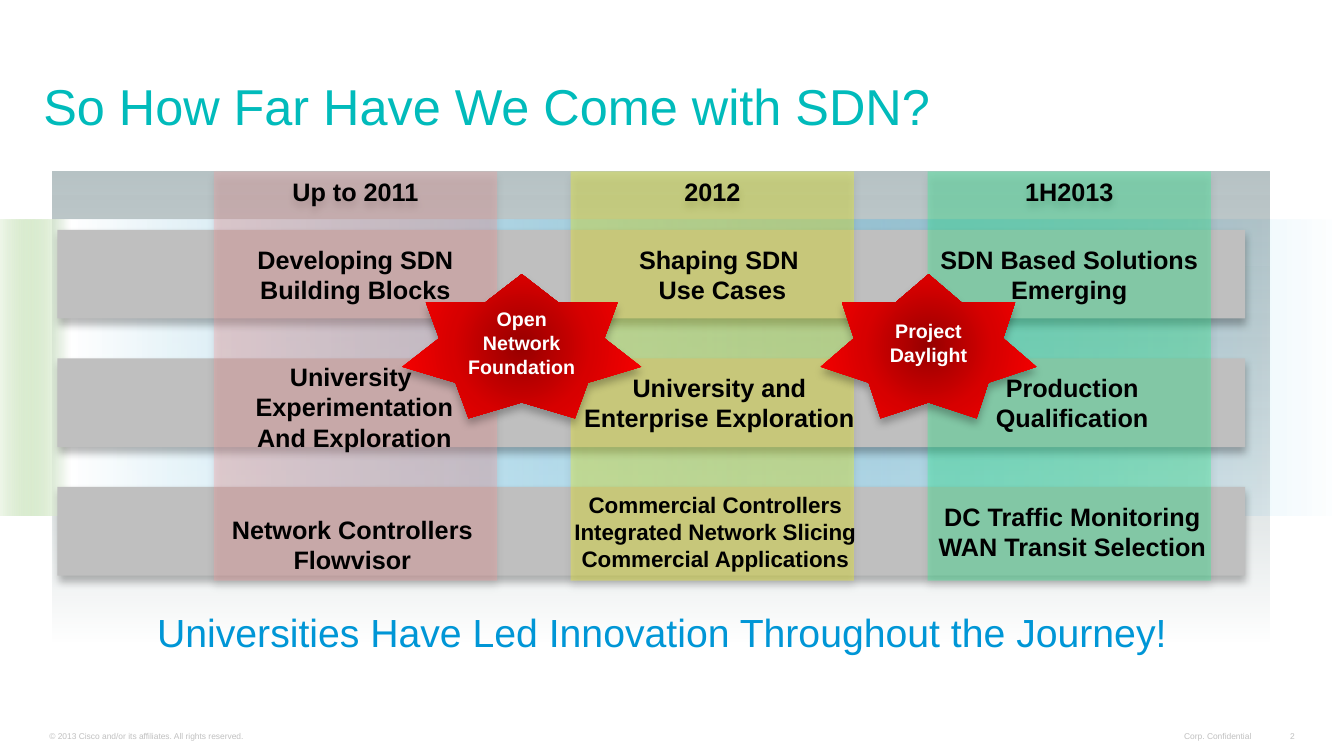
from lxml import etree
from pptx import Presentation
from pptx.dml.color import RGBColor
from pptx.enum.shapes import MSO_SHAPE
from pptx.enum.text import MSO_ANCHOR, MSO_AUTO_SIZE, PP_ALIGN
from pptx.oxml.ns import qn
from pptx.util import Inches, Pt

RECT, STAR = MSO_SHAPE.RECTANGLE, MSO_SHAPE.STAR_7_POINT
TOP, MIDDLE, BOTTOM = MSO_ANCHOR.TOP, MSO_ANCHOR.MIDDLE, MSO_ANCHOR.BOTTOM
LEFT, CENTER, RIGHT = PP_ALIGN.LEFT, PP_ALIGN.CENTER, PP_ALIGN.RIGHT

FONT = "Arial"
C = {"title": "01BBBB", "blue": "0096D6", "footer": "C0C0C0", "bar": "BFBFBF",
     "slate": "8EA1A3", "mist": "B7C3C5", "green": "6DB344", "white": "FFFFFF",
     "black": "000000", "pink": "FF9999", "yellow": "FFFF00", "mint": "1AFF8E",
     "red_in": "970000", "red_mid": "D70000", "red_out": "FF0000"}

# Grid: three period columns over three topic bars
COL_X, COL_STEP, COL_W = 2.12, 3.54, 2.81
COL_Y, COL_H = 1.7, 4.06
BAR_X, BAR_W = 0.57, 11.78
ROW_Y, ROW_STEP, ROW_H = 2.28, 1.275, 0.88
# Cell text is centred on its column, in a box wide enough for the longest line
CELL_W = 3.2
CELL_X = COL_X + (COL_W - CELL_W) / 2

PERIODS = [("Up to 2011", "pink"), ("2012", "yellow"), ("1H2013", "mint")]
# Rows of cells: text, size, nudge right, nudge down
CELLS = [
    [("Developing SDN\nBuilding Blocks", 18, 0, 0),
     ("Shaping SDN \nUse Cases", 18, 0.1, 0),
     ("SDN Based Solutions\nEmerging", 18, 0, 0)],
    [("University \nExperimentation\nAnd Exploration", 18, -0.01, 0.04),
     ("University and\nEnterprise Exploration", 18, 0.07, 0),
     ("Production\nQualification", 18, 0.03, 0)],
    [("Network Controllers\nFlowvisor", 18, -0.03, 0.13),
     ("Commercial Controllers\nIntegrated Network Slicing\nCommercial Applications",
      16, 0.03, 0),
     ("DC Traffic Monitoring\nWAN Transit Selection", 18, 0.03, 0)],
]
MILESTONES = [(8.14, 2.14, "Project\nDaylight"),
              (3.99, 2.37, "Open\nNetwork\nFoundation")]
FOOTERS = [(0.39, 4.99, LEFT, "© 2013 Cisco and/or its affiliates. All rights reserved."),
           (11.64, 0.87, RIGHT, "Corp. Confidential"),
           (12.66, 0.28, RIGHT, "2")]


def style_text(tf, text, size, color, bold=False, align=CENTER, anchor=TOP):
    tf.text = text
    tf.vertical_anchor = anchor
    for p in tf.paragraphs:
        p.alignment = align
        for r in p.runs:
            r.font.name, r.font.size, r.font.bold = FONT, Pt(size), bold
            r.font.color.rgb = RGBColor.from_string(C[color])


def add_label(slide, x, y, w, h, text, size, color, **look):
    s = slide.shapes.add_textbox(Inches(x), Inches(y), Inches(w), Inches(h))
    s.text_frame.word_wrap = False
    style_text(s.text_frame, text, size, color, **look)
    return s


def add_color(parent, color, alpha=100):
    node = etree.SubElement(parent, qn("a:srgbClr"), val=C[color])
    if alpha < 100:
        etree.SubElement(node, qn("a:alpha"), val=str(alpha * 1000))


def fill_gradient(s, stops, angle=None):
    """Stops are (position, color, alpha); no angle means from the centre out."""
    grad = etree.Element(qn("a:gradFill"), rotWithShape="1")
    gs_list = etree.SubElement(grad, qn("a:gsLst"))
    for pos, color, alpha in stops:
        gs = etree.SubElement(gs_list, qn("a:gs"), pos=str(pos * 1000))
        add_color(gs, color, alpha)
    if angle is None:
        circle = etree.SubElement(grad, qn("a:path"), path="circle")
        etree.SubElement(circle, qn("a:fillToRect"),
                         {side: "50000" for side in "ltrb"})
    else:
        etree.SubElement(grad, qn("a:lin"), ang=str(angle * 60000), scaled="0")
    s._element.spPr.find(qn("a:prstGeom")).addnext(grad)


def fill_solid(s, color, alpha=100):
    s.fill.solid()
    s.fill.fore_color.rgb = RGBColor.from_string(C[color])
    if alpha < 100:
        node = s._element.spPr.find(qn("a:solidFill"))[0]
        etree.SubElement(node, qn("a:alpha"), val=str(alpha * 1000))


def add_block(slide, kind, x, y, w, h, shadow=True):
    s = slide.shapes.add_shape(kind, Inches(x), Inches(y), Inches(w), Inches(h))
    s.line.fill.background()
    s.shadow.inherit = False
    if shadow:
        effects = s._element.spPr.find(qn("a:effectLst"))
        outer = etree.SubElement(effects, qn("a:outerShdw"), blurRad=str(Pt(6)),
                                 dist=str(Pt(4)), dir="5400000", rotWithShape="0")
        add_color(outer, "black", 27)
    return s


def add_title(slide, text):
    s = slide.shapes.title
    s.left, s.top, s.width, s.height = (Inches(v) for v in (0.33, 0.47, 12.51, 0.92))
    style_text(s.text_frame, text, 36, "title", align=LEFT, anchor=BOTTOM)
    s.text_frame.auto_size = MSO_AUTO_SIZE.NONE
    s.text_frame.paragraphs[0].line_spacing = 0.8


def add_backdrop(slide):
    panel = add_block(slide, RECT, 0.52, COL_Y, 12.07, 4.68, shadow=False)
    fill_gradient(panel, [(0, "slate", 0), (100, "mist", 100)], 270)
    band = add_block(slide, RECT, -0.1, 2.18, 13.33, 2.94, shadow=False)
    fill_gradient(band, [(0, "blue", 0), (94, "white", 100), (100, "green", 0)], 0)
    band.rotation = 180
    band._element.spPr.find(qn("a:xfrm")).set("flipV", "1")


def add_grid(slide):
    for row in reversed(range(len(CELLS))):
        bar = add_block(slide, RECT, BAR_X, ROW_Y + row * ROW_STEP, BAR_W, ROW_H)
        fill_solid(bar, "bar")
    for col, (period, color) in enumerate(PERIODS):
        s = add_block(slide, RECT, COL_X + col * COL_STEP, COL_Y, COL_W, COL_H)
        fill_solid(s, color, 30)
        style_text(s.text_frame, period, 18, "black", bold=True)
    for row, cells in enumerate(CELLS):
        for col, (text, size, dx, dy) in enumerate(cells):
            add_label(slide, CELL_X + col * COL_STEP + dx, ROW_Y + row * ROW_STEP + dy,
                      CELL_W, ROW_H, text, size, "black", bold=True, anchor=MIDDLE)


def add_milestone(slide, x, w, text):
    s = add_block(slide, STAR, x, 2.72, w, 1.43)
    fill_gradient(s, [(0, "red_in", 100), (50, "red_mid", 100), (100, "red_out", 100)])
    style_text(s.text_frame, text, 14, "white", bold=True, anchor=MIDDLE)


def add_footer(slide, x, w, align, text):
    s = add_label(slide, x, 7.2, w, 0.19, text, 6, "footer", align=align, anchor=BOTTOM)
    s.text_frame.word_wrap = align == LEFT
    s.text_frame.margin_top = s.text_frame.margin_bottom = Inches(0.04)


def main():
    prs = Presentation()
    prs.slide_width, prs.slide_height = Inches(13.33), Inches(7.5)
    slide = prs.slides.add_slide(prs.slide_layouts[5])
    add_title(slide, "So How Far Have We Come with SDN?")
    for footer in FOOTERS:
        add_footer(slide, *footer)
    add_backdrop(slide)
    add_grid(slide)
    add_label(slide, 1.46, 5.99, 10.45, 0.57,
              "Universities Have Led Innovation Throughout the Journey!",
              28, "blue", align=LEFT)
    for milestone in MILESTONES:
        add_milestone(slide, *milestone)
    prs.save("out.pptx")


if __name__ == "__main__":
    main()
